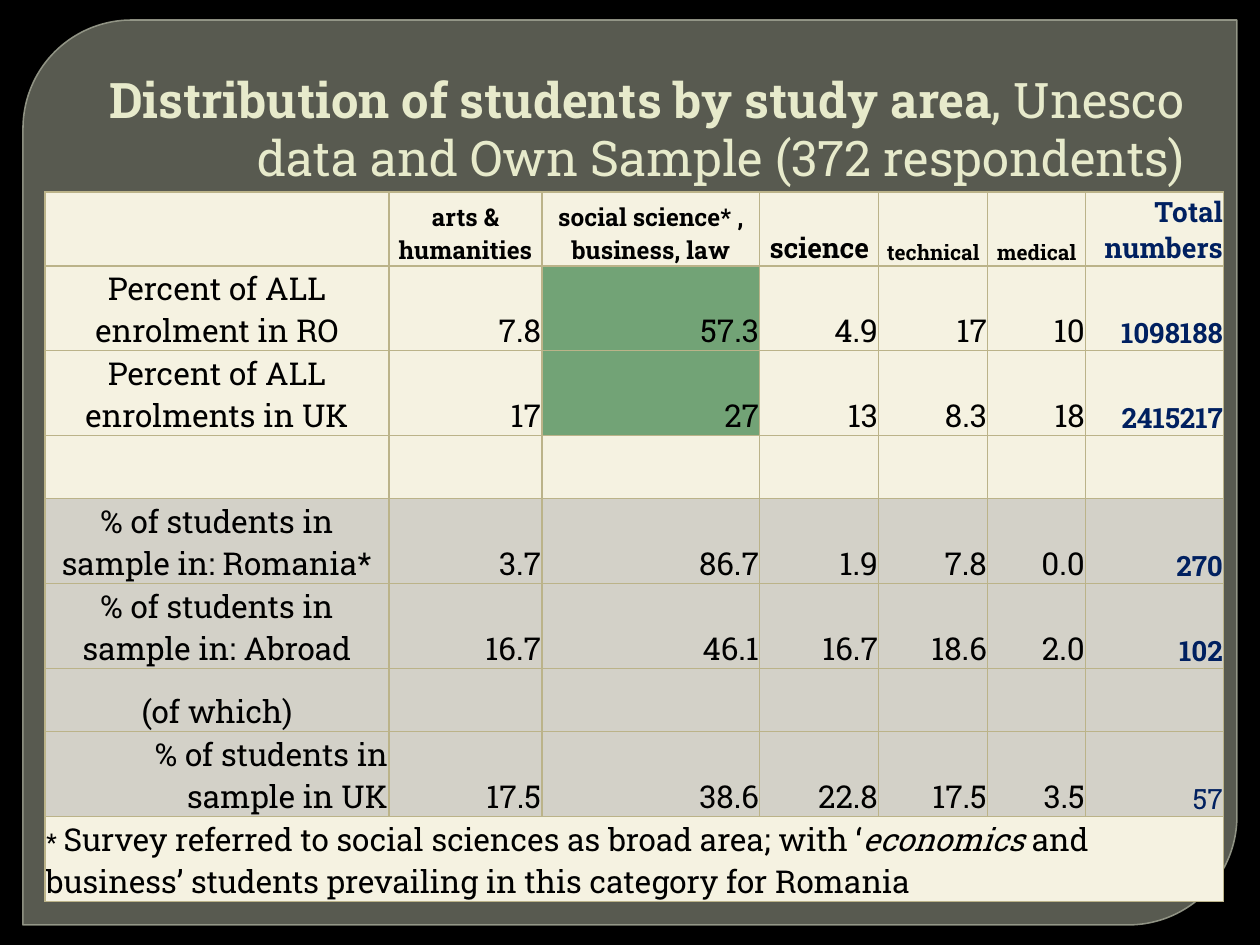
import dataclasses

import lxml.etree
import pptx
import pptx.dml.color
import pptx.enum.shapes
import pptx.enum.text
import pptx.oxml.ns
import pptx.util

EMU_PER_PX = 914400 // 126
ALIGN = pptx.enum.text.PP_ALIGN
ANCHOR = pptx.enum.text.MSO_ANCHOR


@dataclasses.dataclass(frozen=True)
class Theme:
    font: str = "Roboto Slab"
    backdrop: str = "000000"
    panel: str = "888B7B"
    panel_edge: str = "9DA090"
    heading: str = "E7EACB"
    ink: str = "000000"
    total: str = "002060"
    cream: str = "F5F2E1"
    sample: str = "D3D1C8"
    highlight: str = "72A376"
    grid: str = "BBB389"
    title_size: int = 28
    body_size: int = 18
    strong_size: int = 16
    label_size: int = 14
    small_size: int = 12


THEME = Theme()

COLUMN_WIDTHS = [344, 153, 218, 119, 109, 98, 138]
HEADER_HEIGHT, ONE_LINE_HEIGHT, TWO_LINE_HEIGHT = 74, 63, 85
HEADERS = [
    ("arts & humanities", THEME.label_size),
    ("social science* , business, law", THEME.label_size),
    ("science", THEME.strong_size),
    ("technical", THEME.small_size),
    ("medical", THEME.small_size),
]
ENROLMENT_ROWS = [
    ["Percent of ALL enrolment in RO", "7.8", "57.3", "4.9", "17", "10", "1098188"],
    ["Percent of ALL enrolments in UK", "17", "27", "13", "8.3", "18", "2415217"],
    [""] * 7,
]
SAMPLE_ROWS = [
    ["% of students in sample in: Romania*", "3.7", "86.7", "1.9", "7.8", "0.0", "270"],
    ["% of students in sample in: Abroad", "16.7", "46.1", "16.7", "18.6", "2.0", "102"],
    ["(of which)"] + [""] * 6,
    ["% of students in sample in UK", "17.5", "38.6", "22.8", "17.5", "3.5", "57"],
]
SOCIAL_SCIENCE, TOTAL = 2, 6


def px(length):
    return pptx.util.Emu(length * EMU_PER_PX)


def rgb(value):
    return pptx.dml.color.RGBColor.from_string(value)


def paint(fill, color, opacity=100):
    fill.solid()
    fill.fore_color.rgb = rgb(color)
    if opacity < 100:
        # A fill format offers no public way to set transparency.
        tint = fill._xPr.find(".//" + pptx.oxml.ns.qn("a:srgbClr"))
        lxml.etree.SubElement(tint, pptx.oxml.ns.qn("a:alpha"), val=str(opacity * 1000))


def add_run(paragraph, text, size, color=THEME.ink, bold=False, italic=False):
    run = paragraph.add_run()
    run.text = text
    run.font.name = THEME.font
    run.font.size = pptx.util.Pt(size)
    run.font.bold = bold
    run.font.italic = italic
    run.font.color.rgb = rgb(color)


def add_panel(slide, left, top, width, height):
    panel = slide.shapes.add_shape(
        pptx.enum.shapes.MSO_SHAPE.ROUND_2_DIAG_RECTANGLE,
        px(left), px(top), px(width), px(height))
    panel.adjustments[0] = 0.12
    panel.adjustments[1] = 0
    panel.shadow.inherit = False
    paint(panel.fill, THEME.panel, 65)
    panel.line.width = pptx.util.Pt(0.87)
    paint(panel.line.fill, THEME.panel_edge, 88)


def add_title(slide, left, top, width, height):
    title = slide.shapes.add_textbox(px(left), px(top), px(width), px(height))
    frame = title.text_frame
    frame.word_wrap = True
    frame.vertical_anchor = ANCHOR.BOTTOM
    paragraph = frame.paragraphs[0]
    paragraph.alignment = ALIGN.RIGHT
    add_run(paragraph, "Distribution of students by study area",
            THEME.title_size, THEME.heading, bold=True)
    add_run(paragraph, ", Unesco data and Own Sample (372 respondents)",
            THEME.title_size, THEME.heading)


def format_cell(cell, color):
    paint(cell.fill, color)
    cell.vertical_anchor = ANCHOR.BOTTOM
    cell.margin_left = cell.margin_right = cell.margin_top = px(1)
    cell.margin_bottom = 0
    properties = cell._tc.get_or_add_tcPr()
    for position, side in enumerate(("lnL", "lnR", "lnT", "lnB")):
        border = pptx.oxml.parse_xml(
            f'<a:{side} {pptx.oxml.ns.nsdecls("a")} w="{pptx.util.Pt(0.75)}">'
            f'<a:solidFill><a:srgbClr val="{THEME.grid}"/></a:solidFill></a:{side}>')
        properties.insert(position, border)


def write_cell(cell, text, align, size, color=THEME.ink, bold=False):
    paragraph = cell.text_frame.paragraphs[0]
    paragraph.alignment = align
    if text:
        add_run(paragraph, text, size, color, bold)


def write_header(table):
    for column, (label, size) in enumerate(HEADERS, start=1):
        write_cell(table.cell(0, column), label, ALIGN.CENTER, size, bold=True)
    write_cell(table.cell(0, TOTAL), "Total numbers", ALIGN.RIGHT,
               THEME.strong_size, THEME.total, bold=True)


def write_data_row(table, row, values, is_subset):
    """Write one row; a subset row has a right-aligned label and a plain total."""
    label, *shares, total = values
    write_cell(table.cell(row, 0), label,
               ALIGN.RIGHT if is_subset else ALIGN.CENTER, THEME.body_size)
    for column, share in enumerate(shares, start=1):
        write_cell(table.cell(row, column), share, ALIGN.RIGHT, THEME.body_size)
    write_cell(table.cell(row, TOTAL), total, ALIGN.RIGHT,
               THEME.strong_size, THEME.total, bold=not is_subset)


def write_footnote(table, row):
    note = table.cell(row, 0)
    note.merge(table.cell(row, TOTAL))
    paragraph = note.text_frame.paragraphs[0]
    paragraph.alignment = ALIGN.LEFT
    add_run(paragraph, "* ", THEME.label_size)
    add_run(paragraph, "Survey referred to social sciences as broad area; with ‘",
            THEME.body_size)
    add_run(paragraph, "economics ", THEME.body_size, italic=True)
    add_run(paragraph, "and business’ students prevailing in this category for Romania",
            THEME.body_size)


def add_study_area_table(slide, left, top):
    data_rows = ENROLMENT_ROWS + SAMPLE_ROWS
    # Rows with figures have labels that wrap to two lines.
    data_heights = [TWO_LINE_HEIGHT if values[TOTAL] else ONE_LINE_HEIGHT
                    for values in data_rows]
    heights = [HEADER_HEIGHT, *data_heights, TWO_LINE_HEIGHT]
    table = slide.shapes.add_table(
        len(heights), len(COLUMN_WIDTHS), px(left), px(top),
        px(sum(COLUMN_WIDTHS)), px(sum(heights))).table
    table.first_row = table.horz_banding = False
    for column, width in zip(table.columns, COLUMN_WIDTHS):
        column.width = px(width)
    for row, height in zip(table.rows, heights):
        row.height = px(height)

    first_sample = 1 + len(ENROLMENT_ROWS)
    footnote = len(heights) - 1
    for row in range(len(heights)):
        color = THEME.sample if first_sample <= row < footnote else THEME.cream
        for column in range(len(COLUMN_WIDTHS)):
            highlighted = column == SOCIAL_SCIENCE and row in (1, 2)
            format_cell(table.cell(row, column),
                        THEME.highlight if highlighted else color)

    write_header(table)
    for row, values in enumerate(data_rows, start=1):
        write_data_row(table, row, values, is_subset=row == footnote - 1)
    write_footnote(table, footnote)


def main():
    deck = pptx.Presentation()
    deck.slide_width, deck.slide_height = px(1260), px(945)
    slide = deck.slides.add_slide(deck.slide_layouts[6])
    paint(slide.background.fill, THEME.backdrop)
    add_panel(slide, 23, 20, 1214, 905)
    add_title(slide, 63, 35, 1134, 158)
    add_study_area_table(slide, 45, 192)
    deck.save("out.pptx")


if __name__ == "__main__":
    main()
